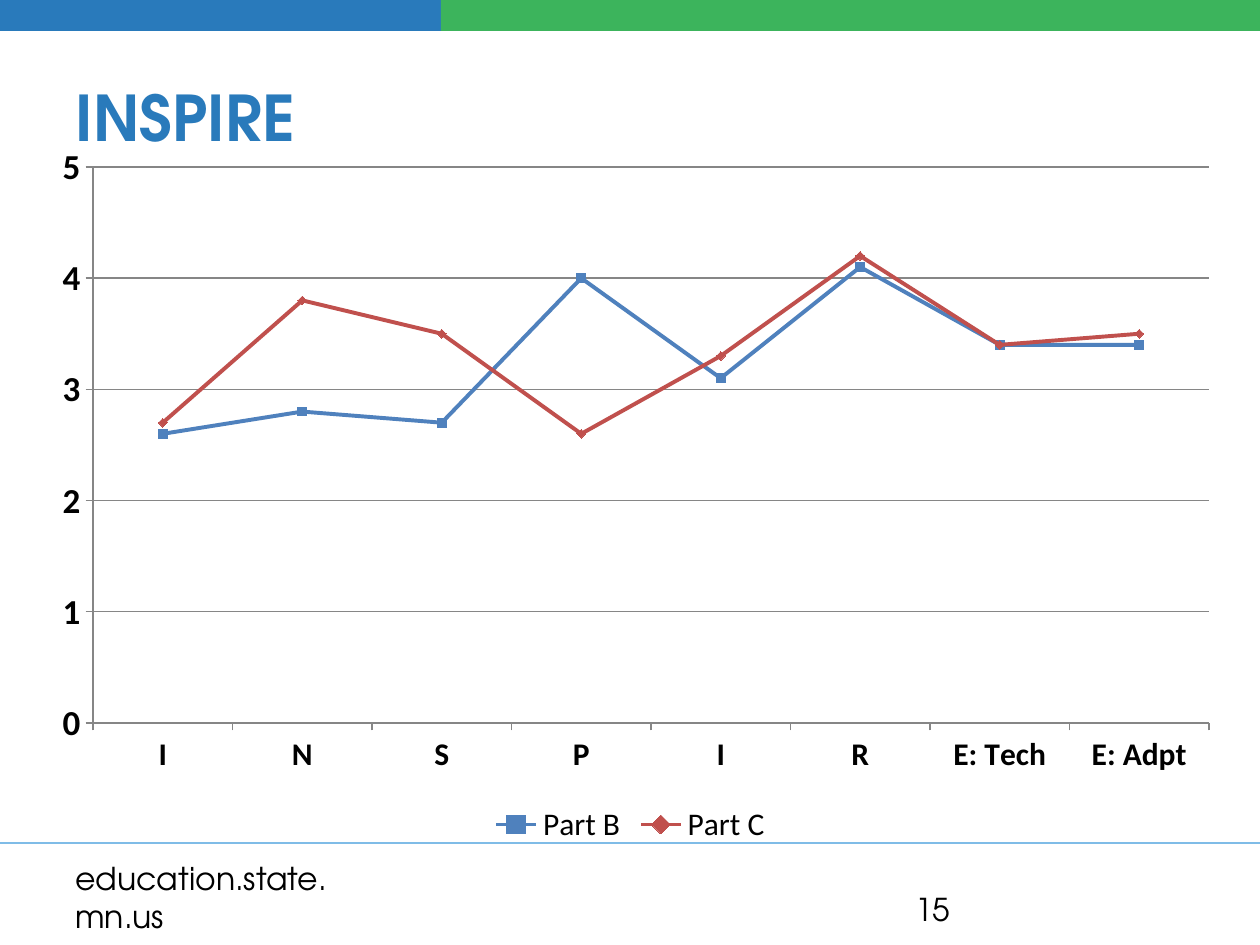
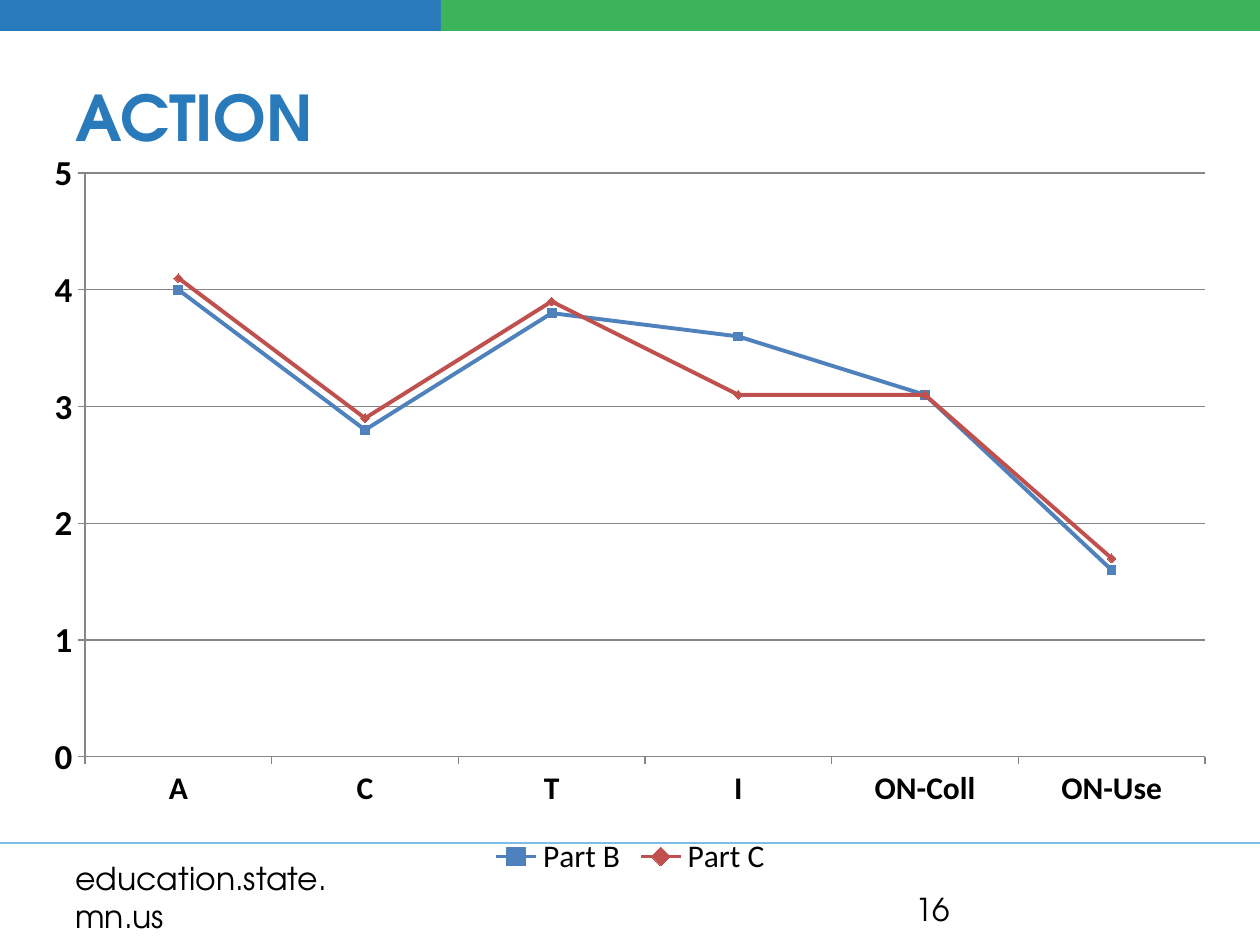
from lxml import etree
from pptx import Presentation
from pptx.chart.data import CategoryChartData
from pptx.dml.color import RGBColor
from pptx.enum.chart import XL_CHART_TYPE, XL_LEGEND_POSITION, XL_MARKER_STYLE, XL_TICK_MARK
from pptx.enum.shapes import MSO_CONNECTOR, MSO_SHAPE
from pptx.enum.text import MSO_ANCHOR, PP_ALIGN
from pptx.oxml import parse_xml
from pptx.oxml.ns import nsdecls, qn
from pptx.util import Pt

EMU_PER_PX = 914400 / 126
SLIDE_WIDTH, SLIDE_HEIGHT = 1260, 945

BLUE = RGBColor(0x29, 0x7A, 0xBB)
GREEN = RGBColor(0x3C, 0xB4, 0x5C)
PALE_BLUE = RGBColor(0x7F, 0xBC, 0xE7)
BLACK = RGBColor(0, 0, 0)
AXIS_GRAY = RGBColor(0x86, 0x86, 0x86)
PART_B_BLUE = RGBColor(0x4F, 0x81, 0xBD)
PART_C_RED = RGBColor(0xC0, 0x50, 0x4D)

BRAND_FONT = "TeX Gyre Adventor"
CHART_FONT = "Calibri"
SERIES_STYLES = [
    (PART_B_BLUE, XL_MARKER_STYLE.SQUARE),
    (PART_C_RED, XL_MARKER_STYLE.DIAMOND),
]

# Frames and plot areas are left, top, width, height in px
RATINGS = [
    {
        "title": "INSPIRE",
        "number": 15,
        "frame": (32, 136, 1197, 714),
        "plot": (93, 167, 1116, 556),
        "categories": ["I", "N", "S", "P", "I", "R", "E: Tech", "E: Adpt"],
        "scores": {
            "Part B": [2.6, 2.8, 2.7, 4, 3.1, 4.1, 3.4, 3.4],
            "Part C": [2.7, 3.8, 3.5, 2.6, 3.3, 4.2, 3.4, 3.5],
        },
    },
    {
        "title": "ACTION",
        "number": 16,
        "frame": (32, 136, 1197, 746),
        "plot": (85, 173, 1120, 584),
        "categories": ["A", "C", "T", "I", "ON-Coll", "ON-Use"],
        "scores": {
            "Part B": [4, 2.8, 3.8, 3.6, 3.1, 1.6],
            "Part C": [4.1, 2.9, 3.9, 3.1, 3.1, 1.7],
        },
    },
]


def px(length):
    return round(length * EMU_PER_PX)


def place(shape, left, top, width, height):
    shape.left, shape.top = px(left), px(top)
    shape.width, shape.height = px(width), px(height)


def style_font(font, size, name=CHART_FONT, color=BLACK, bold=False):
    font.name = name
    font.size = Pt(size)
    font.bold = bold
    font.color.rgb = color


def write(shape, text, size=18, color=BLACK, bold=False):
    frame = shape.text_frame
    frame.word_wrap = True
    frame.vertical_anchor = MSO_ANCHOR.MIDDLE
    paragraph = frame.paragraphs[0]
    paragraph.alignment = PP_ALIGN.LEFT
    run = paragraph.add_run()
    run.text = text
    style_font(run.font, size, BRAND_FONT, color, bold)


def add_band(slide, left, width, color):
    # The bands bleed over the top edge of the slide
    band = slide.shapes.add_shape(
        MSO_SHAPE.RECTANGLE, px(left), px(-158), px(width), px(189))
    band.shadow.inherit = False
    band.fill.solid()
    band.fill.fore_color.rgb = color
    band.line.fill.background()


def add_footer_text(slide, text, left, top):
    box = slide.shapes.add_textbox(px(left), px(top), px(294), px(50))
    write(box, text)


def add_footer_rule(slide):
    rule = slide.shapes.add_connector(
        MSO_CONNECTOR.STRAIGHT, 0, px(843), px(SLIDE_WIDTH), px(843))
    rule.line.color.rgb = PALE_BLUE
    rule.line.width = Pt(1.5)
    etree.SubElement(rule._element.spPr, qn("a:effectLst"))


def add_frame_parts(slide, number):
    # Top bands, footer rule and footer texts shared by all slides
    add_footer_rule(slide)
    add_band(slide, 0, 630, BLUE)
    add_band(slide, 441, SLIDE_WIDTH - 441, GREEN)
    add_footer_text(slide, str(number), 903, 884)
    add_footer_text(slide, "education.state.mn.us", 63, 872)


def set_title(slide, text):
    title = slide.shapes.title
    place(title, 63, 37, 1134, 158)
    write(title, text, size=36, color=BLUE, bold=True)


def set_plot_layout(chart, frame, plot):
    left, top, width, height = frame
    fractions = {
        "x": (plot[0] - left) / width,
        "y": (plot[1] - top) / height,
        "w": plot[2] / width,
        "h": plot[3] / height,
    }
    modes = '<c:layoutTarget val="inner"/><c:xMode val="edge"/><c:yMode val="edge"/>'
    sizes = "".join(f'<c:{key} val="{value:.4f}"/>' for key, value in fractions.items())
    plot_area = chart._chartSpace.chart.plotArea
    for automatic in plot_area.findall(qn("c:layout")):
        plot_area.remove(automatic)
    plot_area.insert(0, parse_xml(
        f'<c:layout {nsdecls("c")}><c:manualLayout>{modes}{sizes}</c:manualLayout></c:layout>'))


def style_axis(axis, size):
    style_font(axis.tick_labels.font, size, bold=True)
    axis.major_tick_mark = XL_TICK_MARK.OUTSIDE
    axis.minor_tick_mark = XL_TICK_MARK.NONE
    axis.format.line.color.rgb = AXIS_GRAY
    axis.format.line.width = Pt(0.75)


def style_axes(chart):
    style_axis(chart.category_axis, 18)
    chart.category_axis.has_major_gridlines = False
    scale = chart.value_axis
    style_axis(scale, 20)
    scale.minimum_scale, scale.maximum_scale, scale.major_unit = 0, 5, 1
    scale.has_major_gridlines = True
    scale.major_gridlines.format.line.color.rgb = AXIS_GRAY
    scale.major_gridlines.format.line.width = Pt(0.75)


def style_series(series, color, marker_style):
    series.smooth = False
    series.format.line.color.rgb = color
    series.format.line.width = Pt(2.25)
    marker = series.marker
    marker.style = marker_style
    marker.size = 5
    marker.format.fill.solid()
    marker.format.fill.fore_color.rgb = color
    marker.format.line.color.rgb = color


def add_score_chart(slide, rating):
    data = CategoryChartData(number_format="General")
    data.categories = rating["categories"]
    for part, scores in rating["scores"].items():
        data.add_series(part, scores)
    chart = slide.shapes.add_chart(
        XL_CHART_TYPE.LINE_MARKERS, *map(px, rating["frame"]), data).chart
    style_font(chart.font, 18)
    chart.has_title = False
    chart.has_legend = True
    chart.legend.position = XL_LEGEND_POSITION.BOTTOM
    chart.legend.include_in_layout = False
    style_font(chart.legend.font, 18)
    style_axes(chart)
    chart.plots[0].vary_by_categories = False
    for series, (color, marker_style) in zip(chart.plots[0].series, SERIES_STYLES):
        style_series(series, color, marker_style)
    set_plot_layout(chart, rating["frame"], rating["plot"])


def main():
    deck = Presentation()
    deck.slide_width, deck.slide_height = px(SLIDE_WIDTH), px(SLIDE_HEIGHT)
    title_only = deck.slide_layouts[5]
    for rating in RATINGS:
        slide = deck.slides.add_slide(title_only)
        add_frame_parts(slide, rating["number"])
        set_title(slide, rating["title"])
        add_score_chart(slide, rating)
    deck.save("out.pptx")


if __name__ == "__main__":
    main()
